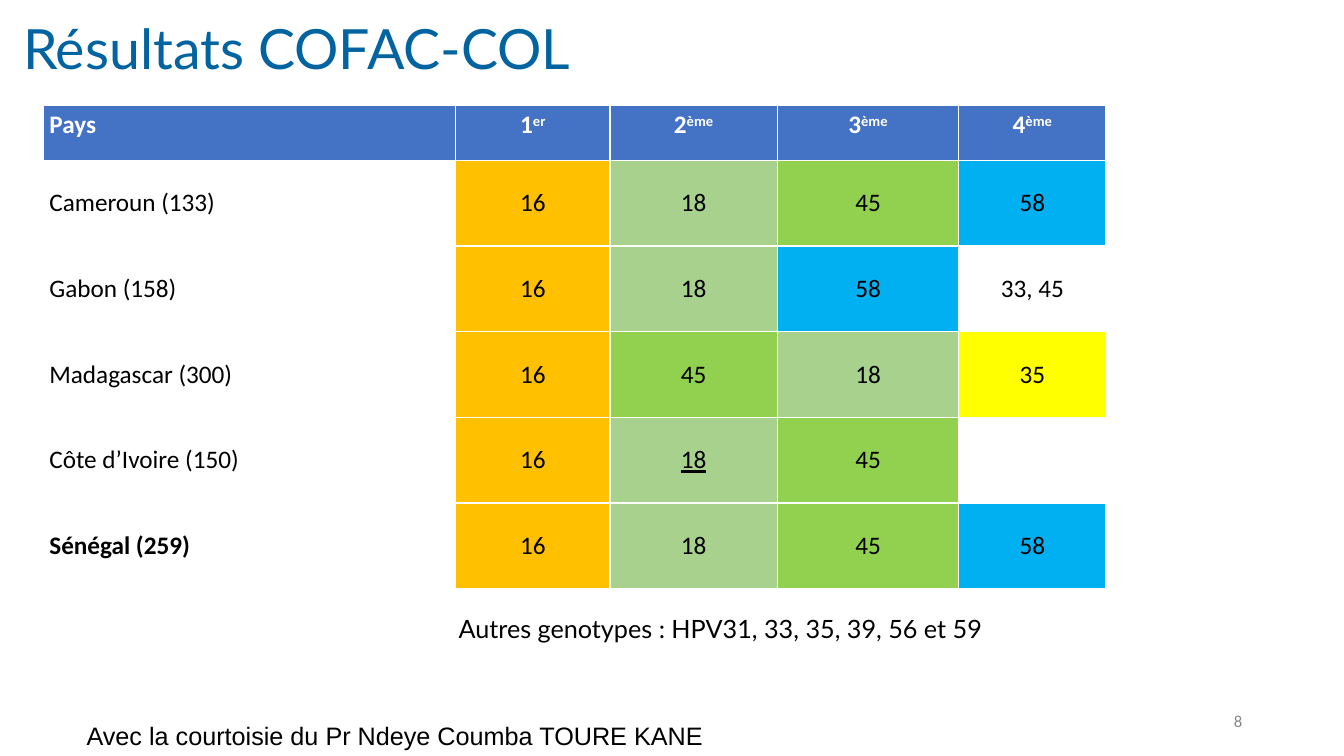
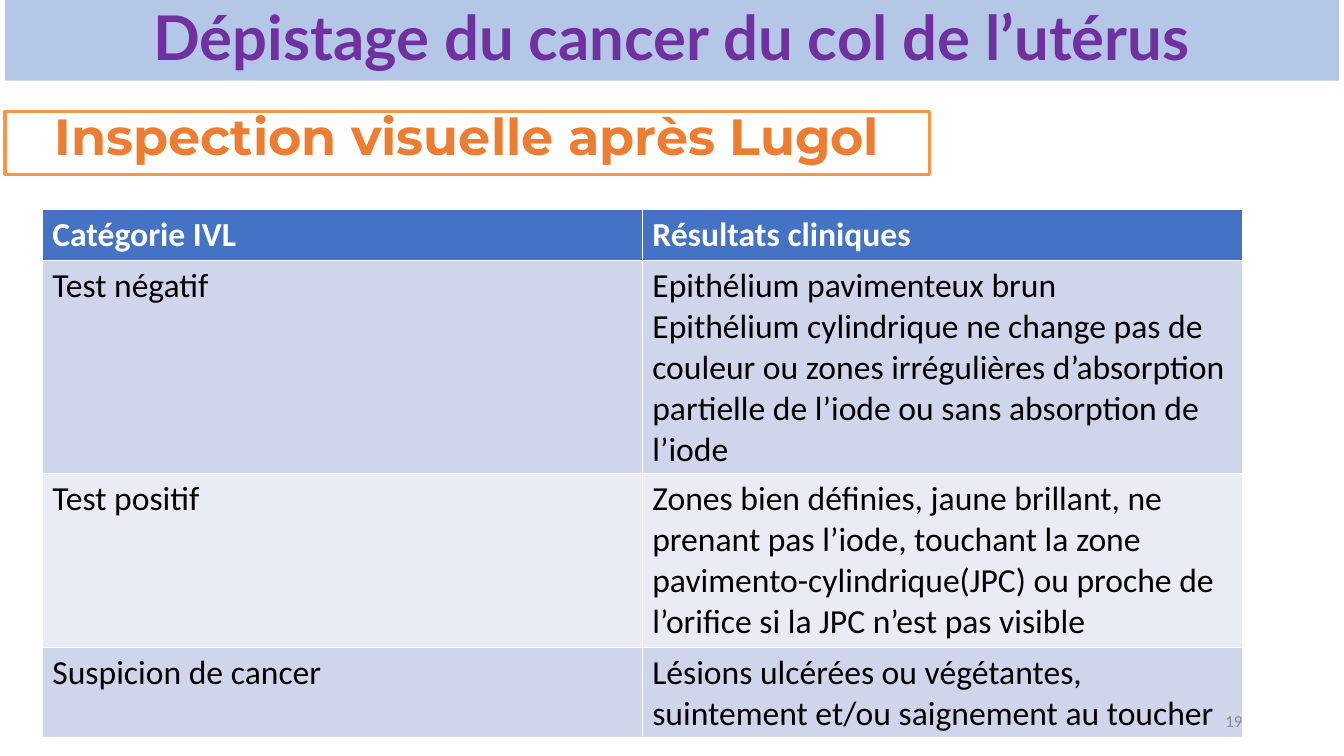
"""Build two slides on cervical cancer screening results."""
from dataclasses import dataclass

from pptx import Presentation
from pptx.dml.color import RGBColor as RGB
from pptx.enum.shapes import MSO_SHAPE as Form
from pptx.enum.text import MSO_ANCHOR as Anchor, PP_ALIGN as Align
from pptx.slide import Slide
from pptx.text.text import TextFrame as Frame
from pptx.util import Inches, Pt

WHITE = RGB(0xFF, 0xFF, 0xFF)
BLACK = RGB(0x00, 0x00, 0x00)
GREY = RGB(0x89, 0x89, 0x89)
HEAD = RGB(0x44, 0x72, 0xC4)
TITLE = RGB(0x01, 0x63, 0xA0)
PURPLE = RGB(0x70, 0x30, 0xA0)
BAND = RGB(0xB4, 0xC7, 0xE7)
ORANGE = RGB(0xED, 0x7D, 0x31)
FRAME = RGB(0xF7, 0x96, 0x46)
DARK = RGB(0xCF, 0xD5, 0xEA)
LIGHT = RGB(0xE9, 0xEB, 0xF5)
TYPES = {
    "16": RGB(0xFF, 0xC0, 0x00),
    "18": RGB(0xA9, 0xD1, 0x8E),
    "45": RGB(0x92, 0xD0, 0x50),
    "58": RGB(0x00, 0xB0, 0xF0),
    "35": RGB(0xFF, 0xFF, 0x00),
}


@dataclass(frozen=True)
class Area:
    """Place and size of an item, in inches."""
    left: float
    top: float
    width: float
    height: float

    def span(self) -> tuple:
        """Return the four lengths."""
        return tuple(map(Inches, (self.left, self.top, self.width, self.height)))


@dataclass(frozen=True)
class Cell:
    """One table cell."""
    text: str
    fill: RGB
    color: RGB = BLACK
    bold: bool = False
    under: bool = False
    align: Align = Align.LEFT
    anchor: Anchor = Anchor.TOP


@dataclass(frozen=True)
class Grid:
    """Layout of one table."""
    left: float
    top: float
    cols: list[float]
    rows: list[float]
    size: float
    side: float = 0.1
    edge: float = 0.05


def write(frame: Frame, text: str, *, size: float, color: RGB = BLACK,
          font: str = "Calibri", bold: bool = False, under: bool = False,
          align: Align = Align.LEFT, pitch: float = 1.0) -> None:
    """Write lines of text, raising what follows a caret."""
    for index, line in enumerate(text.split("\n")):
        para = frame.add_paragraph() if index else frame.paragraphs[0]
        para.alignment = align
        para.line_spacing = pitch
        for level, part in enumerate(line.split("^")):
            run = para.add_run()
            run.text = part
            face = run.font
            face.name, face.size = font, Pt(size)
            face.bold, face.underline = bold, under
            face.color.rgb = color
            if level:
                run._r.get_or_add_rPr().set("baseline", "30000")


def label(slide: Slide, area: Area, text: str, *,
          anchor: Anchor = Anchor.TOP, **style) -> None:
    """Add a text box."""
    frame = slide.shapes.add_textbox(*area.span()).text_frame
    frame.word_wrap = True
    frame.vertical_anchor = anchor
    write(frame, text, **style)


def panel(slide: Slide, area: Area, text: str, *, fill: RGB | None = None,
          line: RGB | None = None, **style) -> None:
    """Add a box with centred text."""
    shape = slide.shapes.add_shape(Form.RECTANGLE, *area.span())
    shape.shadow.inherit = False
    if fill is None:
        shape.fill.background()
    else:
        shape.fill.solid()
        shape.fill.fore_color.rgb = fill
    if line is None:
        shape.line.fill.background()
    else:
        shape.line.color.rgb = line
        shape.line.width = Pt(2.25)
    frame = shape.text_frame
    frame.word_wrap = True
    frame.vertical_anchor = Anchor.MIDDLE
    write(frame, text, align=Align.CENTER, **style)


def chart(slide: Slide, grid: Grid, data: list[list[Cell]]) -> None:
    """Add a table."""
    area = Area(grid.left, grid.top, sum(grid.cols), sum(grid.rows))
    table = slide.shapes.add_table(len(grid.rows), len(grid.cols), *area.span()).table
    for col, width in zip(table.columns, grid.cols):
        col.width = Inches(width)
    for row, height, items in zip(table.rows, grid.rows, data):
        row.height = Inches(height)
        for cell, item in zip(row.cells, items):
            cell.fill.solid()
            cell.fill.fore_color.rgb = item.fill
            cell.vertical_anchor = item.anchor
            cell.margin_left = cell.margin_right = Inches(grid.side)
            cell.margin_top = cell.margin_bottom = Inches(grid.edge)
            if item.text:
                write(cell.text_frame, item.text, size=grid.size, color=item.color,
                      bold=item.bold, under=item.under, align=item.align)


def header(names: list[str], align: Align = Align.LEFT) -> list[Cell]:
    """Make a header row, aligning all but its first cell."""
    return [Cell(name, HEAD, WHITE, True, align=align if index else Align.LEFT)
            for index, name in enumerate(names)]


def number(slide: Slide, text: str) -> None:
    """Add the page number."""
    label(slide, Area(9.42, 6.95, 3, 0.4), text, size=12, color=GREY,
          align=Align.RIGHT, anchor=Anchor.MIDDLE)


def ranking(slide: Slide) -> None:
    """Draw the ranking of types by country."""
    label(slide, Area(0.13, 0.13, 13.08, 0.76), "Résultats COFAC-COL", size=39.6,
          font="Lato", color=TITLE, pitch=0.9, anchor=Anchor.MIDDLE)
    label(slide, Area(3.52, 6.04, 7.25, 0.4),
          "Autres genotypes : HPV31, 33, 35, 39, 56 et 59",
          size=18, font="Lato", align=Align.CENTER)
    lands = {
        "Cameroun (133)": ["16", "18", "45", "58"],
        "Gabon (158)": ["16", "18", "58", "33, 45"],
        "Madagascar (300)": ["16", "45", "18", "35"],
        "Côte d’Ivoire (150)": ["16", "18", "45", ""],
        "Sénégal (259)": ["16", "18", "45", "58"],
    }
    data = [header(["Pays", "1^er", "2^ème", "3^ème", "4^ème"], Align.CENTER)]
    for land, ranks in lands.items():
        name = Cell(land, WHITE, bold=land.startswith("Sénégal"), anchor=Anchor.MIDDLE)
        data.append([name] + [
            Cell(rank, TYPES.get(rank, WHITE), align=Align.CENTER, anchor=Anchor.MIDDLE,
                 under=land.startswith("Côte") and rank == "18")
            for rank in ranks])
    grid = Grid(0.43, 1.05, [4.09, 1.53, 1.66, 1.8, 1.46], [0.54] + [0.85] * 5,
                size=18, side=0.06, edge=0.04)
    chart(slide, grid, data)
    number(slide, "8")
    label(slide, Area(0.29, 7.1, 7.25, 0.4),
          "Avec la courtoisie du Pr Ndeye Coumba TOURE KANE",
          size=18, font="Arial", align=Align.CENTER)


def lugol(slide: Slide) -> None:
    """Draw the results of the Lugol test."""
    tests = {
        "Test négatif": "Epithélium pavimenteux brun\n"
                        "Epithélium cylindrique ne change pas de couleur ou zones "
                        "irrégulières d’absorption partielle de l’iode ou sans "
                        "absorption de l’iode",
        "Test positif": "Zones bien définies, jaune brillant, ne prenant pas l’iode, "
                        "touchant la zone pavimento-cylindrique(JPC) ou proche de "
                        "l’orifice si la JPC n’est pas visible",
        "Suspicion de cancer": "Lésions ulcérées ou végétantes, suintement et/ou "
                               "saignement au toucher",
    }
    data = [header(["Catégorie IVL", "Résultats cliniques"])]
    for index, pair in enumerate(tests.items()):
        fill = LIGHT if index % 2 else DARK
        data.append([Cell(text, fill) for text in pair])
    chart(slide, Grid(0.42, 2.08, [5.95] * 2, [0.5, 2.12, 1.72, 0.9], size=24), data)
    panel(slide, Area(0.05, 0, 13.23, 0.8), "Dépistage du cancer du col de l’utérus",
          fill=BAND, size=44, font="Lato", color=PURPLE, bold=True, pitch=0.9)
    panel(slide, Area(0.05, 1.11, 9.17, 0.62), "Inspection visuelle après Lugol",
          line=FRAME, size=36.3, font="Montserrat", color=ORANGE, bold=True, pitch=0.7)
    number(slide, "19")


def main() -> None:
    """Build and save the slides."""
    deck = Presentation()
    deck.slide_width, deck.slide_height = Inches(13.33), Inches(7.5)
    for draw in (ranking, lugol):
        draw(deck.slides.add_slide(deck.slide_layouts[6]))
    deck.save("out.pptx")


if __name__ == "__main__":
    main()
